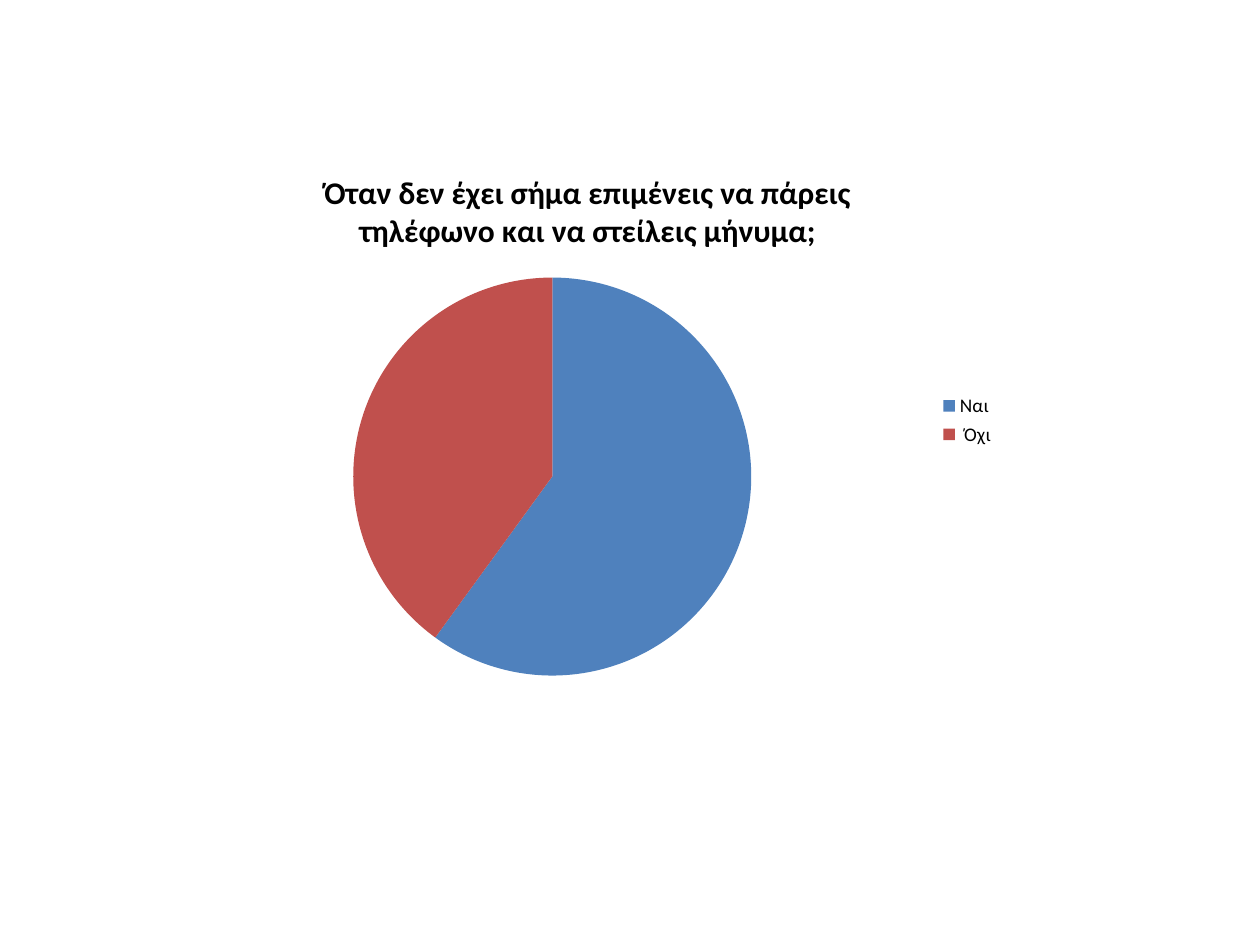
from pptx import Presentation
from pptx.chart.data import CategoryChartData
from pptx.dml.color import RGBColor
from pptx.enum.chart import XL_CHART_TYPE, XL_LEGEND_POSITION
from pptx.util import Inches, Pt

COLOURS = {"text": "000000", "yes": "4F81BD", "no": "C0504D"}
QUESTION = "Όταν δεν έχει σήμα επιμένεις να πάρεις τηλέφωνο και να στείλεις μήνυμα;"
ANSWERS = {"Ναι": (60, "yes"), " Όχι": (40, "no")}
FORMATS = {
    "chart": {"name": "Calibri", "size": Pt(10)},
    "legend": {"name": "Calibri", "size": Pt(11)},
    "title": {"name": "Calibri", "size": Pt(18), "bold": True},
}


def format_font(font, part):
    """Apply the font values of a chart part."""
    for attribute, value in FORMATS[part].items():
        setattr(font, attribute, value)
    font.color.rgb = RGBColor.from_string(COLOURS["text"])


def add_answer_pie(slide):
    """Add the pie chart of the answers with its question and legend."""
    answers = CategoryChartData()
    answers.categories = list(ANSWERS)
    answers.add_series(QUESTION, [share for share, _ in ANSWERS.values()])
    pie = slide.shapes.add_chart(
        XL_CHART_TYPE.PIE,
        Inches(1.33), Inches(1.17), Inches(6.67), Inches(4.33),
        answers,
    ).chart
    format_font(pie.font, "chart")

    pie.has_title = True
    question = pie.chart_title.text_frame
    question.text = QUESTION
    format_font(question.paragraphs[0].runs[0].font, "title")
    pie.chart_title.include_in_layout = False

    pie.has_legend = True
    pie.legend.position = XL_LEGEND_POSITION.RIGHT
    pie.legend.include_in_layout = False
    format_font(pie.legend.font, "legend")

    plot = pie.plots[0]
    plot.vary_by_categories = True
    for index, (_, colour) in enumerate(ANSWERS.values()):
        fill = plot.series[0].points[index].format.fill
        fill.solid()
        fill.fore_color.rgb = RGBColor.from_string(COLOURS[colour])


def main():
    """Build the slide and save it."""
    deck = Presentation()
    deck.slide_width, deck.slide_height = Inches(10), Inches(7.5)
    slide = deck.slides.add_slide(deck.slide_layouts[6])
    add_answer_pie(slide)
    deck.save("out.pptx")


if __name__ == "__main__":
    main()
